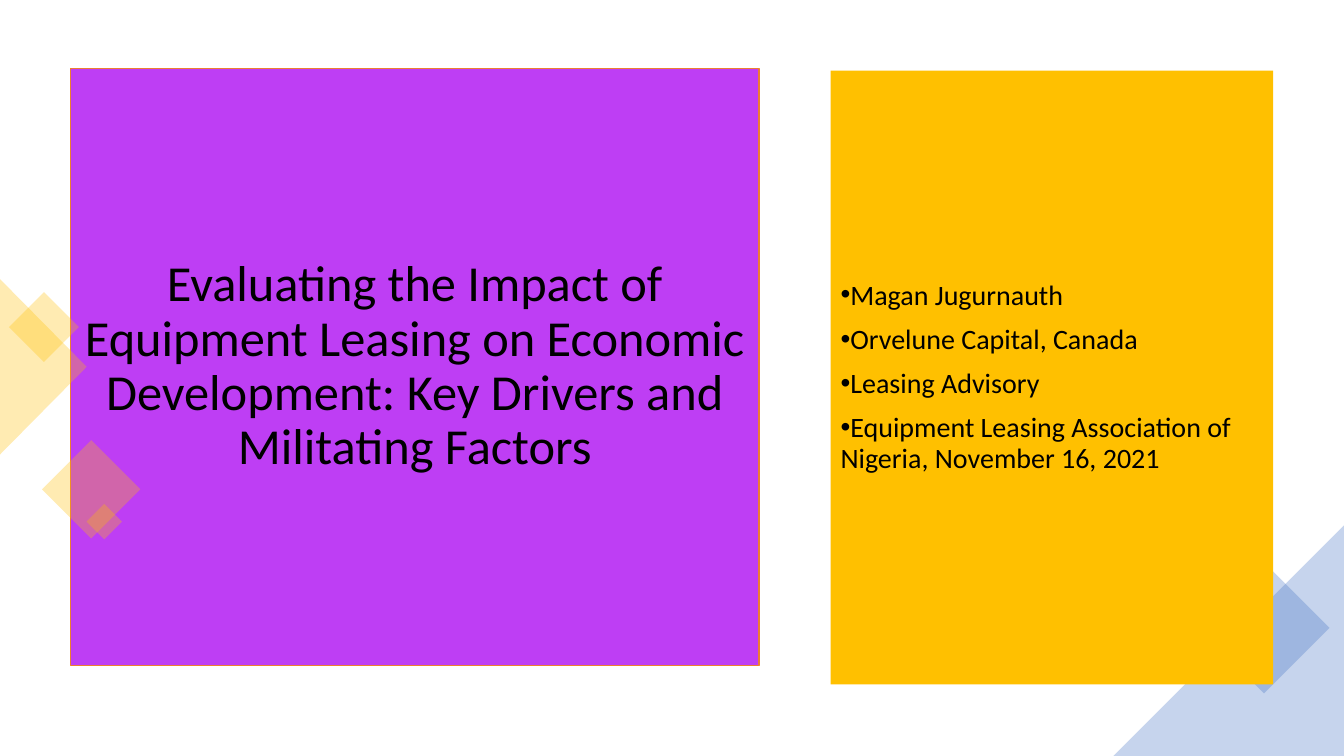
from dataclasses import dataclass

from lxml.etree import SubElement
from pptx import Presentation
from pptx.dml.color import RGBColor
from pptx.enum.shapes import MSO_SHAPE
from pptx.enum.text import MSO_ANCHOR, MSO_AUTO_SIZE, PP_ALIGN
from pptx.oxml.ns import qn
from pptx.util import Pt


@dataclass(frozen=True)
class Theme:
    purple: str = "BE3EF4"
    orange: str = "ED7D31"
    gold: str = "FFC000"
    blue: str = "4472C4"
    ink: str = "000000"
    font: str = "Calibri"
    title_size: int = 36
    detail_size: int = 20
    accent_opacity: int = 30


THEME = Theme()
SLIDE_SIZE = (960, 540)
TITLE = ("Evaluating the Impact of Equipment Leasing on Economic "
         "Development: Key Drivers and Militating Factors")
TITLE_BOX = (50.4, 49, 491.8, 426.2)
DETAILS = [
    "Magan Jugurnauth",
    "Orvelune Capital, Canada",
    "Leasing Advisory",
    "Equipment Leasing Association of Nigeria, November 16, 2021",
]
DETAILS_BOX = (593.3, 50.4, 316.1, 438.5)
# (outline, left, top, width, height, rotation, colour)
ACCENTS = [
    (MSO_SHAPE.ISOSCELES_TRIANGLE, -31.7, 231.1, 125.3, 61.9, 90, THEME.gold),
    (MSO_SHAPE.RECTANGLE, 13.7, 216, 35.3, 35.3, 45, THEME.gold),
    (MSO_SHAPE.RECTANGLE, 40.3, 324.7, 49.7, 49.7, 45, THEME.gold),
    (MSO_SHAPE.RECTANGLE, 65.5, 363.6, 18, 18, 45, THEME.gold),
    (MSO_SHAPE.ISOSCELES_TRIANGLE, 801.4, 440.6, 234.7, 116.6, 135, THEME.blue),
    (MSO_SHAPE.RECTANGLE, 869.8, 415.4, 66.2, 66.2, 45, THEME.blue),
]


def paint(shape, colour):
    shape.fill.solid()
    shape.fill.fore_color.rgb = RGBColor.from_string(colour)


def add_plain_shape(slide, outline, box, colour):
    shape = slide.shapes.add_shape(outline, *map(Pt, box))
    shape.shadow.inherit = False
    shape.line.fill.background()
    paint(shape, colour)
    return shape


def add_accent(slide, outline, left, top, width, height, rotation, colour):
    accent = add_plain_shape(slide, outline, (left, top, width, height), colour)
    accent.rotation = rotation
    tint = accent.fill._xPr.find(qn("a:solidFill"))[0]
    SubElement(tint, qn("a:alpha"), val=str(THEME.accent_opacity * 1000))


def write(shape, lines, size, paragraph_format):
    frame = shape.text_frame
    frame.text = "\n".join(lines)
    frame_format = {"word_wrap": True, "auto_size": MSO_AUTO_SIZE.NONE,
                    "vertical_anchor": MSO_ANCHOR.MIDDLE}
    for name, value in frame_format.items():
        setattr(frame, name, value)
    for paragraph in frame.paragraphs:
        for name, value in paragraph_format.items():
            setattr(paragraph, name, value)
        font = paragraph.runs[0].font
        font.name, font.size = THEME.font, Pt(size)
        font.color.rgb = RGBColor.from_string(THEME.ink)


def add_bullets(shape):
    for paragraph in shape.text_frame.paragraphs:
        properties = paragraph._p.get_or_add_pPr()
        properties.set("marL", "0")
        properties.set("indent", str(-Pt(18)))
        SubElement(properties, qn("a:buFont"), typeface="Arial")
        SubElement(properties, qn("a:buChar"), char="•")


def main():
    deck = Presentation()
    deck.slide_width, deck.slide_height = map(Pt, SLIDE_SIZE)
    slide = deck.slides.add_slide(deck.slide_layouts[5])

    title = slide.shapes.title
    title.left, title.top, title.width, title.height = map(Pt, TITLE_BOX)
    paint(title, THEME.purple)
    title.line.color.rgb = RGBColor.from_string(THEME.orange)
    title.line.width = Pt(1)
    write(title, [TITLE], THEME.title_size,
          {"alignment": PP_ALIGN.CENTER, "line_spacing": 0.9})

    for accent in ACCENTS:
        add_accent(slide, *accent)

    details = add_plain_shape(slide, MSO_SHAPE.RECTANGLE, DETAILS_BOX, THEME.gold)
    write(details, DETAILS, THEME.detail_size,
          {"alignment": PP_ALIGN.LEFT, "line_spacing": 0.9, "space_before": Pt(10)})
    add_bullets(details)

    deck.save("out.pptx")


if __name__ == "__main__":
    main()
